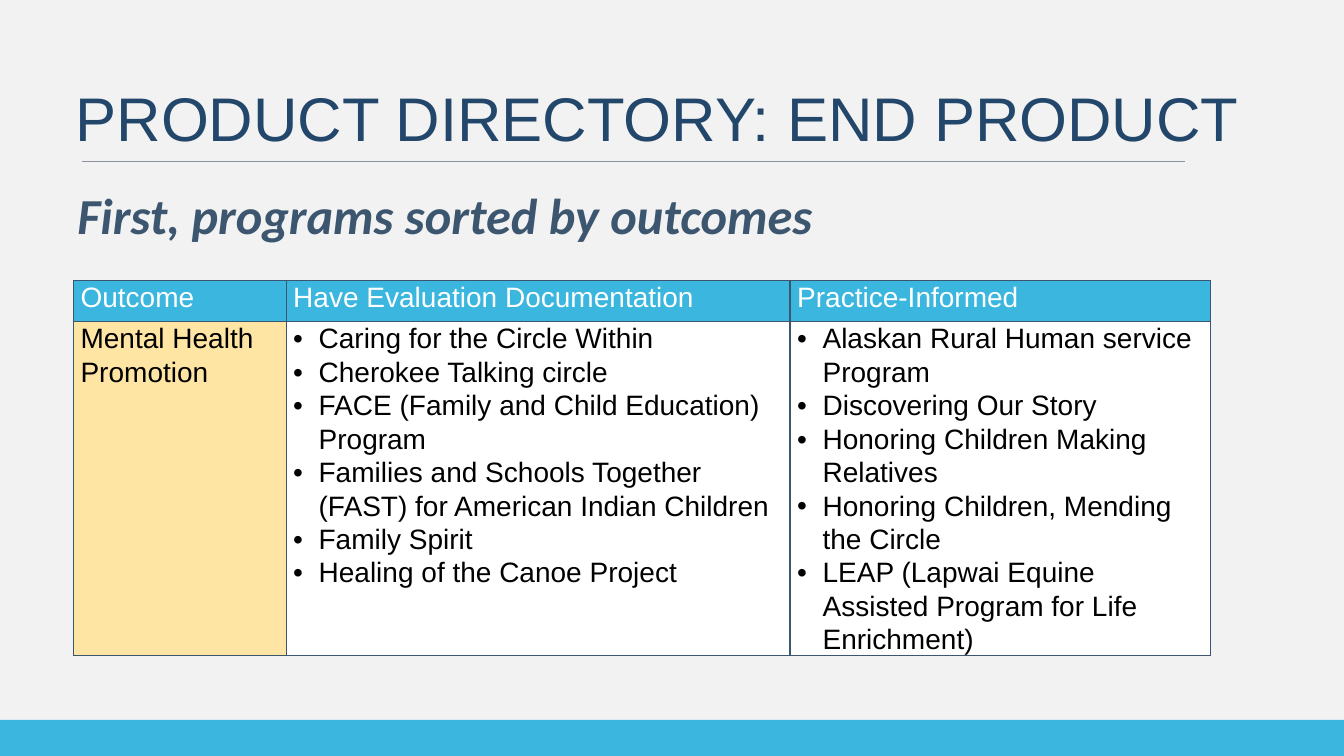
from lxml import etree
from pptx import Presentation
from pptx.dml.color import RGBColor
from pptx.enum.shapes import MSO_CONNECTOR, MSO_SHAPE
from pptx.enum.text import MSO_ANCHOR, MSO_AUTO_SIZE, PP_ALIGN
from pptx.oxml.ns import qn
from pptx.util import Cm, Pt

LEFT = PP_ALIGN.LEFT
MIDDLE = MSO_ANCHOR.MIDDLE
TOP = MSO_ANCHOR.TOP
FIXED = MSO_AUTO_SIZE.NONE
RECT = MSO_SHAPE.RECTANGLE
LINE = MSO_CONNECTOR.STRAIGHT

SKY, NAVY, SLATE, SAND = "3AB6DF", "23466B", "3D566F", "FFE5A3"
PALE, WHITE, BLACK, GREY = "F2F2F2", "FFFFFF", "000000", "8C9299"

HEADS = ["Outcome", "Have Evaluation Documentation", "Practice-Informed"]
TESTED = [
    "Caring for the Circle Within",
    "Cherokee Talking circle",
    "FACE (Family and Child Education) Program",
    "Families and Schools Together (FAST) for American Indian Children",
    "Family Spirit",
    "Healing of the Canoe Project",
]
INFORMED = [
    "Alaskan Rural Human service Program",
    "Discovering Our Story",
    "Honoring Children Making Relatives",
    "Honoring Children, Mending the Circle",
    "LEAP (Lapwai Equine Assisted Program for Life Enrichment)",
]
WIDTHS = [5.36, 12.7, 10.59]
HEIGHTS = [1.04, 8.38]


def color(code):
    """Turn a hex string into a colour."""
    return RGBColor.from_string(code)


def apply(item, values):
    """Set attributes from a dict."""
    for name, value in values.items():
        setattr(item, name, value)


def place(shape, left, top, width, height):
    """Position a shape in centimetres."""
    apply(shape, dict(left=Cm(left), top=Cm(top), width=Cm(width), height=Cm(height)))


def write(para, text, hue, **style):
    """Add one formatted run to a paragraph."""
    run = para.add_run()
    run.text = text
    run.font.color.rgb = color(hue)
    apply(run.font, style)


def add_title(slide, text):
    """Fill and format the title placeholder."""
    title = slide.shapes.title
    place(title, 1.65, 1.35, 30.48, 3.18)
    apply(title.text_frame, dict(vertical_anchor=MIDDLE, word_wrap=True, auto_size=FIXED))
    para = title.text_frame.paragraphs[0]
    para.alignment = LEFT
    write(para, text, NAVY, name="Arial", size=Pt(44))


def add_lead(slide, text):
    """Add the line of text above the table."""
    box = slide.shapes.add_textbox(Cm(1.7), Cm(4.52), Cm(28.78), Cm(1.8))
    box.text_frame.word_wrap = True
    write(box.text_frame.paragraphs[0], text, SLATE,
          name="Calibri", size=Pt(36), bold=True, italic=True)


def add_rule(slide):
    """Draw the thin line under the title."""
    rule = slide.shapes.add_connector(LINE, Cm(2.06), Cm(4.06), Cm(29.87), Cm(4.06))
    rule.line.color.rgb = color(GREY)
    rule.line.width = Pt(0.5)
    etree.SubElement(rule._element.spPr, qn("a:effectLst"))


def add_band(slide):
    """Draw the band along the bottom edge."""
    band = slide.shapes.add_shape(RECT, Cm(0), Cm(18.14), Cm(33.87), Cm(0.91))
    band.shadow.inherit = False
    band.fill.solid()
    band.fill.fore_color.rgb = color(SKY)
    band.line.fill.background()


def add_edges(cell):
    """Outline a cell on all four sides."""
    props = cell._tc.get_or_add_tcPr()
    for side in "LRTB":
        edge = etree.SubElement(props, qn(f"a:ln{side}"), w=str(Pt(1)))
        fill = etree.SubElement(edge, qn("a:solidFill"))
        etree.SubElement(fill, qn("a:srgbClr"), val=SLATE)


def add_bullet(para):
    """Give a paragraph a hanging bullet."""
    props = para._p.get_or_add_pPr()
    apply_to = {"marL": Cm(0.64), "indent": -Cm(0.64)}
    for name, value in apply_to.items():
        props.set(name, str(value))
    etree.SubElement(props, qn("a:buFont"), typeface="Arial")
    etree.SubElement(props, qn("a:buChar"), char="•")


def fill_cell(cell, lines, back, hue, listed=False):
    """Write lines into a cell and colour it."""
    apply(cell, dict(margin_left=Cm(0.18), margin_right=Cm(0.18),
                     margin_top=0, margin_bottom=0, vertical_anchor=TOP))
    add_edges(cell)
    cell.fill.solid()
    cell.fill.fore_color.rgb = color(back)
    frame = cell.text_frame
    for spot, text in enumerate(lines):
        para = frame.add_paragraph() if spot else frame.paragraphs[0]
        if listed:
            add_bullet(para)
        para.line_spacing = 1.07
        write(para, text, hue, name="Arial", size=Pt(20), bold=False)


def add_grid(slide):
    """Add the table of programs."""
    frame = slide.shapes.add_table(2, 3, Cm(1.85), Cm(7.06), Cm(sum(WIDTHS)), Cm(sum(HEIGHTS)))
    grid = frame.table
    grid.horz_banding = False
    for column, width in zip(grid.columns, WIDTHS):
        column.width = Cm(width)
    for row, height in zip(grid.rows, HEIGHTS):
        row.height = Cm(height)
    for spot, head in enumerate(HEADS):
        fill_cell(grid.cell(0, spot), [head], SKY, WHITE)
    fill_cell(grid.cell(1, 0), ["Mental Health Promotion"], SAND, BLACK)
    for spot, names in enumerate([TESTED, INFORMED], 1):
        fill_cell(grid.cell(1, spot), names, WHITE, BLACK, listed=True)


def main():
    """Build and save the slide."""
    deck = Presentation()
    apply(deck, dict(slide_width=Cm(33.87), slide_height=Cm(19.05)))
    slide = deck.slides.add_slide(deck.slide_layouts[5])
    slide.background.fill.solid()
    slide.background.fill.fore_color.rgb = color(PALE)
    add_band(slide)
    add_rule(slide)
    add_title(slide, "PRODUCT DIRECTORY: END PRODUCT")
    add_grid(slide)
    add_lead(slide, "First, programs sorted by outcomes")
    deck.save("out.pptx")


if __name__ == "__main__":
    main()
